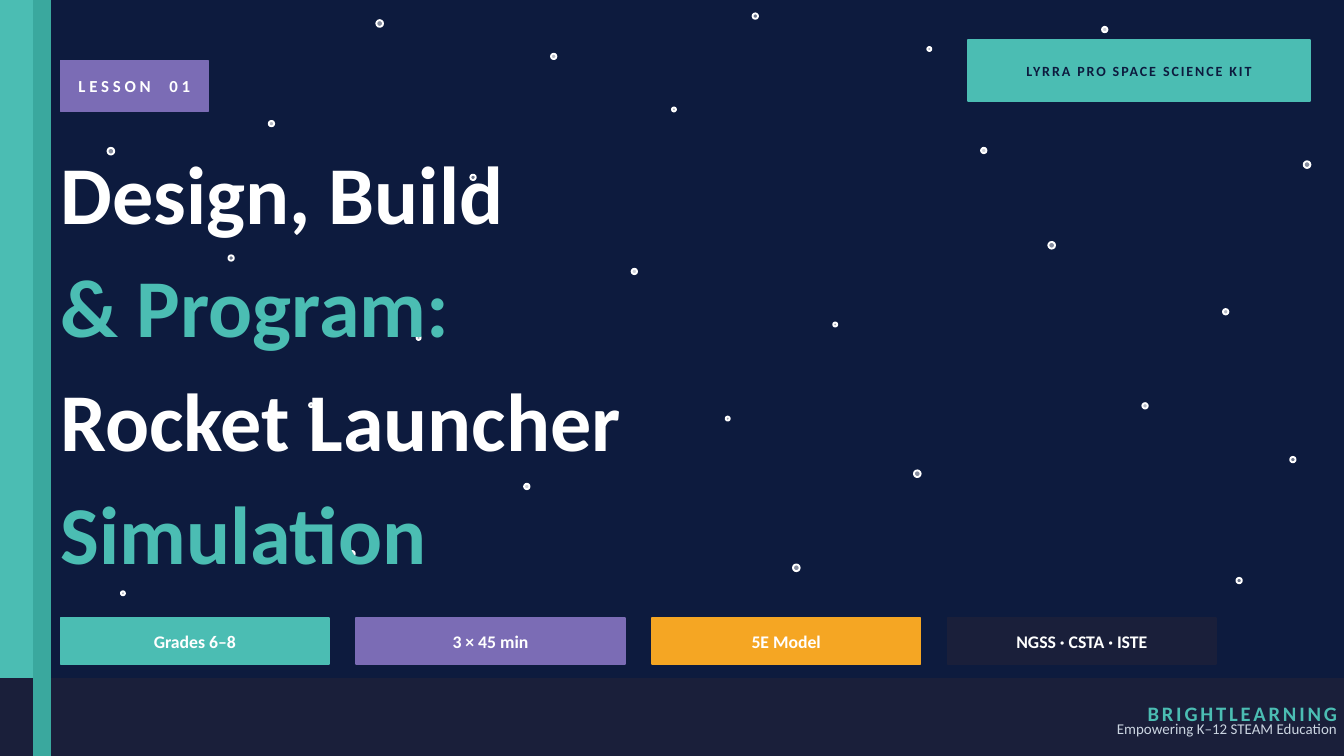
from lxml import etree
from pptx import Presentation
from pptx import util as u
from pptx.dml.color import RGBColor
from pptx.enum import shapes, text
from pptx.oxml.ns import qn

NIGHT = RGBColor(0x0D, 0x1B, 0x3E)
INDIGO = RGBColor(0x1A, 0x1F, 0x3A)
TEAL = RGBColor(0x4B, 0xBD, 0xB3)
DEEP_TEAL = RGBColor(0x3A, 0xA8, 0x9E)
PURPLE = RGBColor(0x7B, 0x6C, 0xB5)
ORANGE = RGBColor(0xF5, 0xA6, 0x23)
SILVER = RGBColor(0xCB, 0xD5, 0xE1)
WHITE = RGBColor(0xFF, 0xFF, 0xFF)

WIDTH = 10
HEIGHT = WIDTH * 9 / 16
FOOTER_TOP = 5.05
LEFT = 0.45

deck = Presentation()
deck.slide_width, deck.slide_height = u.Inches(WIDTH), u.Inches(HEIGHT)
slide = deck.slides.add_slide(deck.slide_layouts[6])
slide.background.fill.solid()
slide.background.fill.fore_color.rgb = NIGHT


def add_block(box, color, kind=shapes.MSO_SHAPE.RECTANGLE, opacity=100):
    """Draw a filled shape outlined in its own colour; opacity affects the fill only."""
    block = slide.shapes.add_shape(kind, *map(u.Inches, box))
    block.shadow.inherit = False
    block.fill.solid()
    block.fill.fore_color.rgb = color
    if opacity < 100:
        fill_color = block.fill._xPr.find(qn("a:solidFill"))[0]
        etree.SubElement(fill_color, qn("a:alpha")).set("val", str(opacity * 1000))
    block.line.color.rgb = color
    block.line.width = u.Pt(1)


def add_text(box, lines, size, colors=(WHITE,), bold=True, align=text.PP_ALIGN.CENTER,
             anchor=text.MSO_ANCHOR.MIDDLE, tracking=0, word_gap=None, line_spacing=None):
    """Write one paragraph per line, cycling colors; word_gap is the tracking of spaces."""
    frame = slide.shapes.add_textbox(*map(u.Inches, box)).text_frame
    frame.word_wrap = True
    frame.vertical_anchor = anchor
    frame.margin_left = frame.margin_right = frame.margin_top = frame.margin_bottom = 0
    for i, line in enumerate(lines):
        paragraph = frame.paragraphs[0] if i == 0 else frame.add_paragraph()
        paragraph.alignment = align
        if line_spacing:
            paragraph.line_spacing = line_spacing
        pieces = [line] if word_gap is None else line.replace(" ", "| |").split("|")
        for piece in pieces:
            run = paragraph.add_run()
            run.text = piece
            run.font.name = "Calibri"
            run.font.size = u.Pt(size)
            run.font.bold = bold
            run.font.color.rgb = colors[i % len(colors)]
            spacing = word_gap if piece == " " else tracking
            if spacing:
                run._r.get_or_add_rPr().set("spc", str(int(spacing * 100)))


# Night sky: left, top, diameter, opacity
stars = [
    (2.8, 0.15, 0.05, 50), (4.1, 0.4, 0.04, 70), (5.6, 0.1, 0.04, 40),
    (6.9, 0.35, 0.03, 65), (8.2, 0.2, 0.04, 80), (0.8, 1.1, 0.05, 50),
    (2, 0.9, 0.04, 70), (3.5, 1.3, 0.04, 40), (5, 0.8, 0.03, 65),
    (7.3, 1.1, 0.04, 80), (9.7, 1.2, 0.05, 50), (1.7, 1.9, 0.04, 40),
    (3.1, 2.5, 0.03, 65), (4.7, 2, 0.04, 80), (6.2, 2.4, 0.03, 60),
    (7.8, 1.8, 0.05, 50), (9.1, 2.3, 0.04, 70), (0.5, 3.3, 0.04, 40),
    (2.3, 3, 0.03, 65), (3.9, 3.6, 0.04, 80), (5.4, 3.1, 0.03, 60),
    (6.8, 3.5, 0.05, 50), (8.5, 3, 0.04, 70), (9.6, 3.4, 0.04, 40),
    (0.9, 4.4, 0.03, 65), (2.6, 4.1, 0.04, 80), (5.9, 4.2, 0.05, 50),
    (7.4, 4.6, 0.04, 70), (9.2, 4.3, 0.04, 40),
]
for left, top, diameter, opacity in stars:
    add_block((left, top, diameter, diameter), WHITE, shapes.MSO_SHAPE.OVAL, opacity)

# Side bars and footer band
add_block((0, 0, 0.25, HEIGHT), TEAL)
add_block((0, FOOTER_TOP, WIDTH, HEIGHT - FOOTER_TOP), INDIGO)
add_block((0.25, 0, 0.12, HEIGHT), DEEP_TEAL)

# Kit and lesson labels
kit_box = (7.2, 0.3, 2.55, 0.45)
add_block(kit_box, TEAL)
add_text(kit_box, ["LYRRA PRO SPACE SCIENCE KIT"], 7.5, colors=(NIGHT,), tracking=1)

lesson_box = (LEFT, 0.45, 1.1, 0.38)
add_block(lesson_box, PURPLE)
add_text(lesson_box, ["LESSON 01"], 9, tracking=2, word_gap=6)

# Title
add_text((LEFT, 0.95, 6.3, 3.6),
         ["Design, Build", "& Program:", "Rocket Launcher", "Simulation"], 44,
         colors=(WHITE, TEAL), align=text.PP_ALIGN.LEFT,
         anchor=text.MSO_ANCHOR.TOP, line_spacing=1.15)

# Lesson facts
facts = [("Grades 6–8", TEAL), ("3 × 45 min", PURPLE),
         ("5E Model", ORANGE), ("NGSS · CSTA · ISTE", INDIGO)]
for i, (fact, color) in enumerate(facts):
    fact_box = (LEFT + i * 2.2, 4.6, 2, 0.34)
    add_block(fact_box, color)
    add_text(fact_box, [fact], 9.5)

# Publisher
add_text((7.5, 5.1, 2.45, 0.42), ["BRIGHTLEARNING"], 11, colors=(TEAL,),
         align=text.PP_ALIGN.RIGHT, tracking=1.5)
add_text((5.5, 5.28, 4.45, 0.28), ["Empowering K–12 STEAM Education"], 8,
         colors=(SILVER,), bold=False, align=text.PP_ALIGN.RIGHT)

deck.save("out.pptx")
